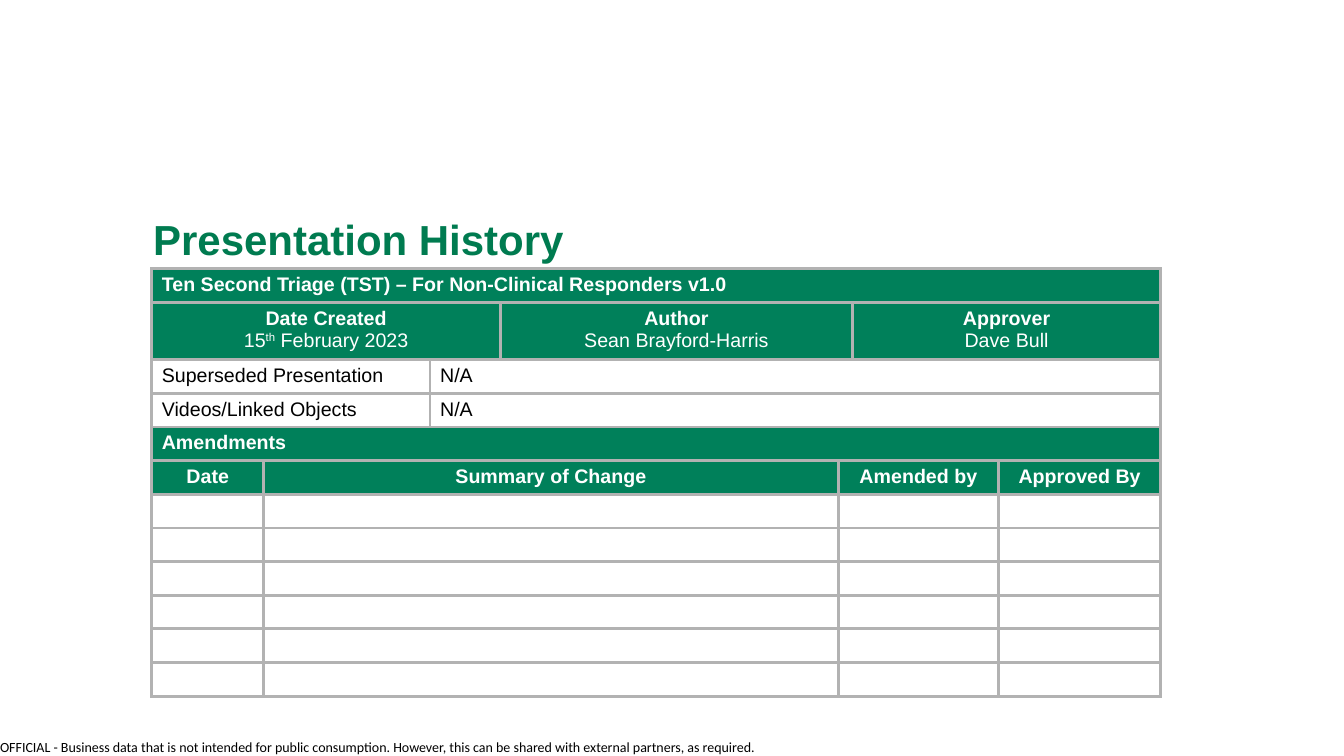
from lxml.etree import SubElement
from pptx import Presentation
from pptx.dml.color import RGBColor
from pptx.enum.text import MSO_AUTO_SIZE as AutoSize, MSO_VERTICAL_ANCHOR as Anchor, PP_ALIGN as Align
from pptx.oxml.ns import qn
from pptx.util import Pt

GREEN = RGBColor(0x00, 0x80, 0x5A)
TITLE_GREEN = RGBColor(0x00, 0x7B, 0x50)
GREY = RGBColor(0xB2, 0xB2, 0xB2)
WHITE = RGBColor(0xFF, 0xFF, 0xFF)
BLACK = RGBColor(0x00, 0x00, 0x00)

COLUMN_WIDTHS = [80, 118.8, 50.4, 241.2, 10.1, 104.4, 115.9]
ROW_HEIGHTS = [21, 36, 23.8, 23.8, 21, 23.8] + [21] * 6
DATE_CREATED = [("15", {}), ("th", {"baseline": "30000"}), (" February 2023", {})]


class HistorySlide:
    body = {"name": "Arial", "size": Pt(14), "bold": False}
    border_width = Pt(2.25)

    def __init__(self, presentation):
        self.slide = presentation.slides.add_slide(presentation.slide_layouts[5])

    def add_runs(self, paragraph, runs, align=Align.LEFT, **font_values):
        paragraph.alignment = align
        for text, attributes in runs:
            run = paragraph.add_run()
            run.text = text
            for name, value in (self.body | font_values).items():
                if name == "color":
                    run.font.color.rgb = value
                else:
                    setattr(run.font, name, value)
            for name, value in attributes.items():
                run._r.get_or_add_rPr().set(name, value)

    def frame(self, shape, bounds, **values):
        for name, value in zip(("left", "top", "width", "height"), bounds):
            setattr(shape, name, Pt(value))
        for name, value in values.items():
            setattr(shape.text_frame, name, value)
        return shape.text_frame.paragraphs[0]

    def title(self, text, bounds):
        paragraph = self.frame(self.slide.shapes.title, bounds, word_wrap=True,
                               auto_size=AutoSize.NONE, vertical_anchor=Anchor.BOTTOM)
        paragraph.line_spacing = 0.9
        self.add_runs(paragraph, [(text, {})], size=Pt(30), bold=True, color=TITLE_GREEN)

    def footer(self, text, bounds):
        box = self.slide.shapes.add_textbox(0, 0, 0, 0)
        margins = {f"margin_{side}": 0 for side in ("left", "top", "right", "bottom")}
        paragraph = self.frame(box, bounds, word_wrap=True, **margins)
        self.add_runs(paragraph, [(text, {})], name="Calibri", size=Pt(10), color=BLACK)

    def borders(self, cell):
        properties = cell._tc.get_or_add_tcPr()
        for side in ("lnL", "lnR", "lnT", "lnB"):
            line = SubElement(properties, qn(f"a:{side}"), w=str(self.border_width))
            fill = SubElement(line, qn("a:solidFill"))
            SubElement(fill, qn("a:srgbClr"), val=str(GREY))

    def table(self, left, top):
        shape = self.slide.shapes.add_table(
            len(ROW_HEIGHTS), len(COLUMN_WIDTHS), Pt(left), Pt(top),
            Pt(sum(COLUMN_WIDTHS)), Pt(sum(ROW_HEIGHTS)))
        self.grid = shape.table
        self.grid.first_row = self.grid.horz_banding = False
        for column, width in zip(self.grid.columns, COLUMN_WIDTHS):
            column.width = Pt(width)
        for row, height in zip(self.grid.rows, ROW_HEIGHTS):
            row.height = Pt(height)
        for cell in self.grid.iter_cells():
            self.borders(cell)
            cell.fill.background()

    def row(self, index, spans, contents, filled=False, align=Align.LEFT):
        column = 0
        for span, lines in zip(spans, contents):
            cell = self.grid.cell(index, column)
            if span > 1:
                cell.merge(self.grid.cell(index, column + span - 1))
            if filled:
                cell.fill.solid()
                cell.fill.fore_color.rgb = GREEN
            frame = cell.text_frame
            for number, line in enumerate(lines):
                paragraph = frame.add_paragraph() if number else frame.paragraphs[0]
                runs = [(line, {})] if isinstance(line, str) else line
                self.add_runs(paragraph, runs, align, bold=filled and number == 0,
                              color=WHITE if filled else BLACK)
            if not lines:
                SubElement(frame.paragraphs[0]._p, qn("a:endParaRPr"), sz="1400")
            column += span


def main():
    presentation = Presentation()
    presentation.slide_width = Pt(960)
    presentation.slide_height = Pt(540)
    history = HistorySlide(presentation)
    history.footer("OFFICIAL - Business data that is not intended for public consumption. "
                   "However, this can be shared with external partners, as required.",
                   (0, 527.8, 545.8, 12.2))
    history.title("Presentation History", (102.2, 150.5, 720, 41.8))
    history.table(108.4, 192)
    history.row(0, [7], [["Ten Second Triage (TST) – For Non-Clinical Responders v1.0"]], True)
    history.row(1, [3, 2, 2], [["Date Created", DATE_CREATED],
                               ["Author", "Sean Brayford-Harris"],
                               ["Approver", "Dave Bull"]], True, Align.CENTER)
    history.row(2, [2, 5], [["Superseded Presentation"], ["N/A"]])
    history.row(3, [2, 5], [["Videos/Linked Objects"], ["N/A"]])
    history.row(4, [7], [["Amendments"]], True)
    amendment_spans = [1, 3, 2, 1]
    history.row(5, amendment_spans, [["Date"], ["Summary of Change"], ["Amended by"],
                                     ["Approved By"]], True, Align.CENTER)
    for index in range(6, len(ROW_HEIGHTS)):
        history.row(index, amendment_spans, [[]] * 4)
    presentation.save("out.pptx")


if __name__ == "__main__":
    main()
